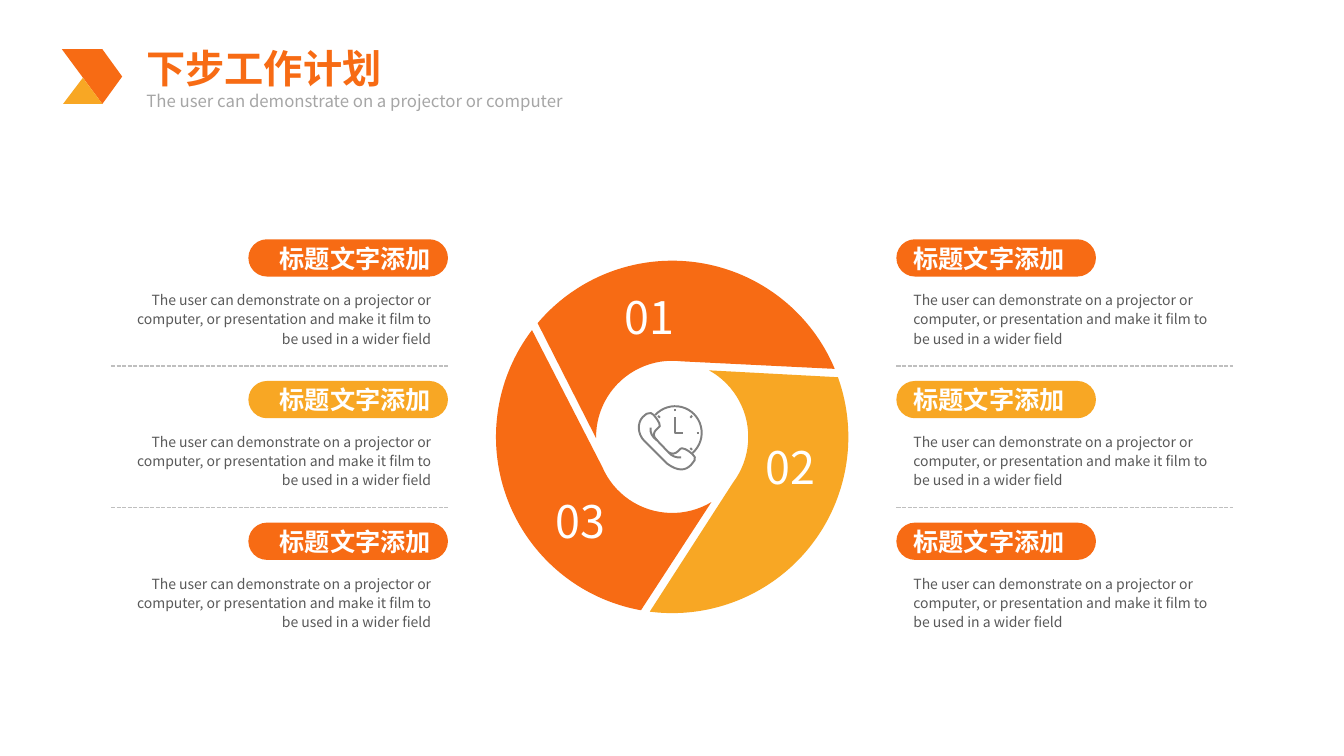
from math import cos, radians, sin, tan

from lxml.etree import SubElement
from pptx import Presentation
from pptx.dml.color import RGBColor
from pptx.enum.dml import MSO_LINE
from pptx.enum.shapes import MSO_CONNECTOR, MSO_SHAPE
from pptx.enum.text import MSO_ANCHOR, PP_ALIGN
from pptx.oxml.ns import qn
from pptx.util import Cm, Pt

ORANGE = RGBColor(0xF7, 0x6B, 0x14)
AMBER = RGBColor(0xF8, 0xA7, 0x24)
WHITE = RGBColor(0xFF, 0xFF, 0xFF)
DARK = RGBColor(0x59, 0x59, 0x59)
GREY = RGBColor(0x80, 0x80, 0x80)
LIGHT = RGBColor(0xA6, 0xA6, 0xA6)
RULE = RGBColor(0xBF, 0xBF, 0xBF)
FONT = "Noto Sans CJK SC"

TITLE = "下步工作计划"
TAGLINE = "The user can demonstrate on a projector or computer"
LABEL = "标题文字添加"
BODY = ("The user can demonstrate on a projector or computer, or presentation "
        "and make it film to be used in a wider field")


def write(shape, text, size, color, align=PP_ALIGN.LEFT, bold=False,
          anchor=MSO_ANCHOR.TOP, spacing=1.0, wrap=True):
    frame = shape.text_frame
    frame.text = text
    frame.word_wrap, frame.vertical_anchor = wrap, anchor
    para = frame.paragraphs[0]
    para.alignment, para.line_spacing = align, spacing
    font = para.runs[0].font
    for key, value in {"size": Pt(size), "bold": bold, "name": FONT}.items():
        setattr(font, key, value)
    font.color.rgb = color
    SubElement(para.runs[0]._r.rPr, qn("a:ea"), typeface=FONT)


def add_text(slide, box, text, size, color, **style):
    write(slide.shapes.add_textbox(*map(Cm, box)), text, size, color, **style)


def paint(shape, color):
    shape.shadow.inherit = False
    shape.fill.solid()
    shape.fill.fore_color.rgb = color
    shape.line.fill.background()


def outline(slide, x, y, unit, contours, close=True):
    """Build one freeform; a part of one point is a line, of three a curve."""
    def spot(point):
        return Cm(x + unit * point[0]), Cm(y + unit * point[1])

    pen = slide.shapes.build_freeform(*spot(contours[0][0][0]))
    for i, (start, *parts) in enumerate(contours):
        if i:
            pen.move_to(*spot(start[0]))
        pen.add_line_segments([spot(p) for part in parts for p in part], close=close)
    shape = pen.convert_to_shape()
    # Join the three points of each curve
    lines = iter(list(shape._element.iter(qn("a:lnTo"))))
    for contour in contours:
        for part in contour[1:]:
            group = [next(lines) for _ in part]
            if len(group) == 3:
                group[0].tag  # first point keeps its place in the outline
                curve = SubElement(group[0].getparent(), qn("a:cubicBezTo"))
                group[0].addprevious(curve)
                for line in group:
                    curve.append(line[0])
                    line.getparent().remove(line)
    return shape


def arc(radius, start, end, count=3):
    """Start point and curve parts of an arc around the origin."""
    step = radians(end - start) / count
    pull = 4 / 3 * tan(step / 4)
    parts = [((radius * cos(radians(start)), radius * sin(radians(start))),)]
    for i in range(count):
        a = radians(start) + step * i
        b = a + step
        parts.append((
            (radius * (cos(a) - pull * sin(a)), radius * (sin(a) + pull * cos(a))),
            (radius * (cos(b) + pull * sin(b)), radius * (sin(b) - pull * cos(b))),
            (radius * cos(b), radius * sin(b))))
    return parts


def add_header(slide, x, y):
    # Arrow mark
    for color, corners in (
        (ORANGE, ((1.52, .69), (1.02, 1.38), (0, 0), (1.02, 0))),
        (AMBER, ((.53, .72), (.03, 1.38), (1.02, 1.38))),
    ):
        paint(outline(slide, x, y, 1, [[(p,) for p in corners]]), color)
    # Title and tagline
    title = slide.shapes.title
    place = {"left": x + 1.88, "top": y - .25, "width": 6.5, "height": 1.45}
    for key, value in place.items():
        setattr(title, key, Cm(value))
    write(title, TITLE, 28, ORANGE, bold=True, wrap=False)
    add_text(slide, (x + 1.88, y + .92, 14.07, .76), TAGLINE, 12, LIGHT)


def add_icon(slide, x, y, size):
    """Clock and handset in one outline, on 64 units around the clock's middle."""
    strokes = [
        # Clock face and hands
        arc(26, -138, 49),
        [((0, -15),), ((0, 0),), ((8, 0),)],
        # Handset
        [((-26, -19),), ((-23, -21), (-19, -16), (-15.5, -9.5)),
         ((-14, -7), (-15, -5.5), (-17, -4.5)),
         ((-22, 0), (-22, 3), (-17.5, 7.5)), ((-6.5, 19),),
         ((-3, 21), (0, 21), (3.5, 17.5)),
         ((5.5, 14.5), (7.5, 14.5), (10, 16)),
         ((13, 17.5), (22, 23), (19, 27)), ((15.5, 31.5),),
         ((10, 37), (3, 38), (-8, 30)), ((-30, 8),),
         ((-37, 1), (-37, -10), (-31.5, -15.5)), ((-28, -18.5),), ((-26, -19),)],
        [((-24, -5),), ((-24.5, 0), (-22.5, 4), (-17.5, 7.5))],
        [((-6.5, 19),), ((-3, 23), (1, 24.5), (6, 24))],
    ]
    # Hour ticks
    for turn in range(-135, 46, 45):
        strokes.append([arc(r, turn, turn)[0] for r in (21, 23.5)])
    unit = size / 64
    icon = outline(slide, x + 37 * unit, y + 27 * unit, unit, strokes, False)
    icon.shadow.inherit = False
    icon.fill.background()
    icon.line.color.rgb = GREY
    icon.line.width = Pt(1.4)


def add_wheel(slide, x, y, size):
    radius = size / 2
    cx, cy = x + radius, y + radius
    blades = (("01", ORANGE, -.57, -3.04), ("02", AMBER, 2.99, .74),
              ("03", ORANGE, -2.32, 2.1))
    # Three blades, a third of a turn apart
    for i, (_, color, _, _) in enumerate(blades):
        turn = 120 * i
        outer = arc(radius, 220.2 + turn, 337.3 + turn)
        inner = arc(radius * .432, 277 + turn, 179 + turn)
        paint(outline(slide, cx, cy, 1, [outer + inner]), color)
    add_icon(slide, cx - .88, cy - .8, 1.65)
    # Numbers
    for text, _, dx, dy in blades:
        add_text(slide, (cx + dx - 1.27, cy + dy - .95, 2.54, 1.9), text, 32, WHITE,
                 align=PP_ALIGN.CENTER, anchor=MSO_ANCHOR.MIDDLE, wrap=False)


def add_column(slide, x, y, width, right):
    """Three labelled notes; right tells that they align to the right edge."""
    pitch, pad = 3.57, .18
    align = PP_ALIGN.RIGHT if right else PP_ALIGN.LEFT

    def left(w, gap=0):
        return x + width - w - gap if right else x + gap

    for i, color in enumerate((ORANGE, AMBER, ORANGE)):
        top = y + pitch * i
        # Pill and label
        pill = slide.shapes.add_shape(MSO_SHAPE.ROUNDED_RECTANGLE,
                                      *map(Cm, (left(5.03), top, 5.03, .94)))
        pill.adjustments[0] = .5
        paint(pill, color)
        add_text(slide, (left(5.92, pad), top - .03, 5.92, 1.02), LABEL, 18, WHITE,
                 align=align, bold=True)
        # Note
        add_text(slide, (left(8.31, pad), top + 1.14, 8.31, 1.73), BODY, 10, DARK,
                 align=align, spacing=1.14)
        # Dashed rule between notes
        if i < 2:
            ends = (x, top + 3.19, x + width, top + 3.19)
            rule = slide.shapes.add_connector(MSO_CONNECTOR.STRAIGHT, *map(Cm, ends))
            rule.line.color.rgb = RULE
            rule.line.width = Pt(1)
            rule.line.dash_style = MSO_LINE.SQUARE_DOT
            SubElement(rule._element.spPr, qn("a:effectLst"))


def main():
    deck = Presentation()
    deck.slide_width, deck.slide_height = Cm(33.87), Cm(19.05)
    slide = deck.slides.add_slide(deck.slide_layouts[5])
    add_header(slide, 1.56, 1.24)
    add_wheel(slide, 12.5, 6.57, 8.88)
    add_column(slide, 2.8, 6.03, 8.49, True)
    add_column(slide, 22.59, 6.03, 8.49, False)
    deck.save("out.pptx")


if __name__ == "__main__":
    main()
